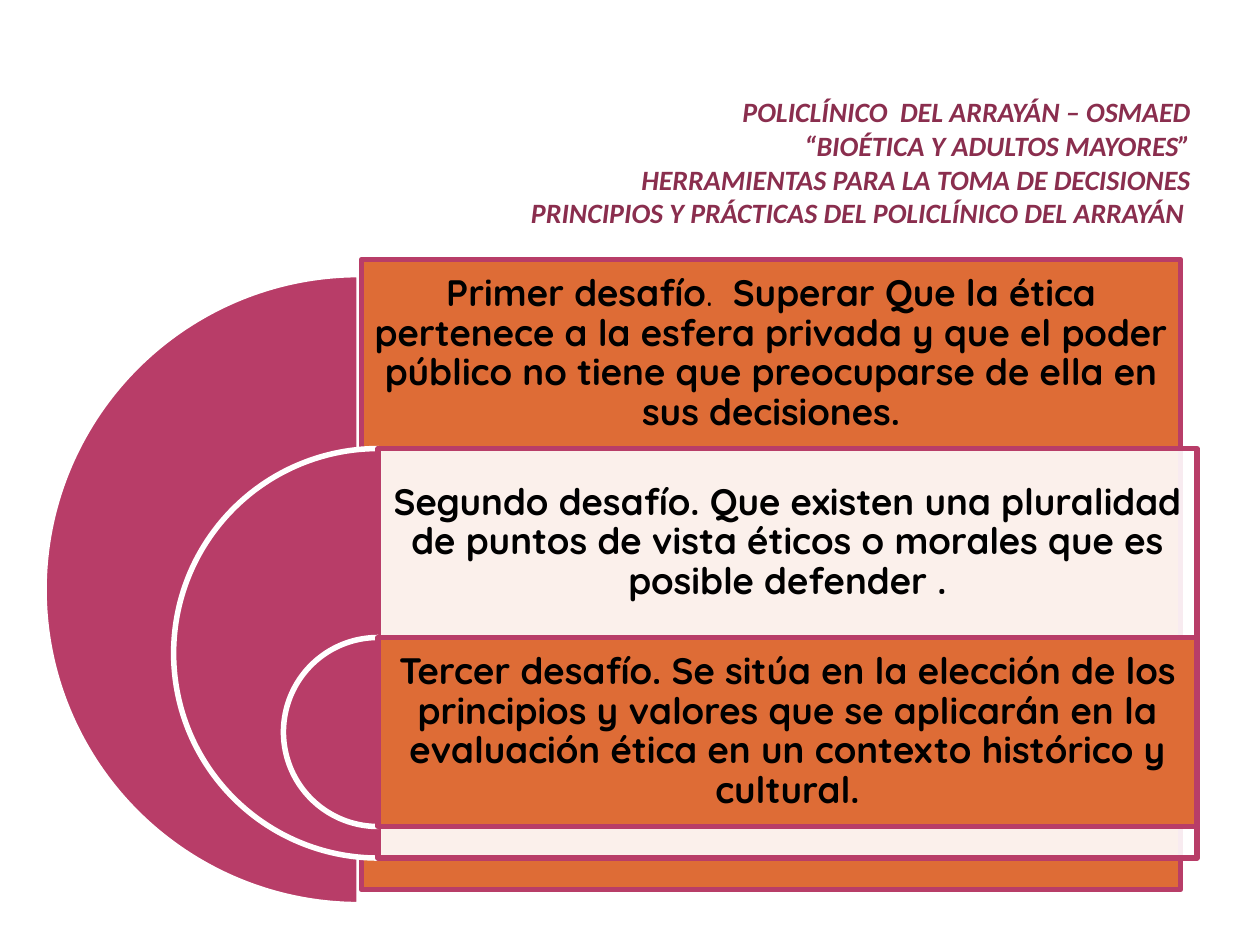
from pptx import Presentation
from pptx.dml.color import RGBColor
from pptx.enum.shapes import MSO_SHAPE
from pptx.enum.text import MSO_ANCHOR, PP_ALIGN
from pptx.oxml.ns import qn
from pptx.util import Pt
from lxml import etree

PIE, RECTANGLE = MSO_SHAPE.PIE, MSO_SHAPE.RECTANGLE
MIDDLE, BOTTOM = MSO_ANCHOR.MIDDLE, MSO_ANCHOR.BOTTOM
CENTER, RIGHT = PP_ALIGN.CENTER, PP_ALIGN.RIGHT

COLORS = {"white": "FFFFFF", "black": "000000", "wine": "8A2E4E",
          "raspberry": "B83D68", "orange": "DE6C36"}

HEADING = "\v".join([
    "POLICLÍNICO  DEL ARRAYÁN – OSMAED",
    "“BIOÉTICA Y ADULTOS MAYORES”",
    "HERRAMIENTAS PARA LA TOMA DE DECISIONES",
    "PRINCIPIOS Y PRÁCTICAS DEL POLICLÍNICO DEL ARRAYÁN ",
])

CHALLENGES = [
    (25.2, 156.96, 206.64, 148.32, 360, "orange", [
        ("Primer desafío", True), (".  ", False),
        ("Superar Que la ética pertenece a la esfera privada y que el poder "
         "público no tiene que preocuparse de ella en sus decisiones.", True)]),
    (99.2, 256.32, 216, 256.32, 234, "white", [
        ("Segundo desafío. Que existen una pluralidad de puntos de vista "
         "éticos o morales que es posible defender .", True)]),
    (162, 364.32, 216, 364.32, 108, "orange", [
        ("Tercer desafío. Se sitúa en la elección de los principios y valores "
         "que se aplicarán en la evaluación ética en un contexto histórico y "
         "cultural.", True)]),
]
PANEL_WIDTH, TEXT_HEIGHT = 468, 108


def add_block(preset, left, top, width, height, fill, line):
    block = slide.shapes.add_shape(preset, Pt(left), Pt(top), Pt(width), Pt(height))
    block.shadow.inherit = False
    block.fill.solid()
    block.fill.fore_color.rgb = RGBColor.from_string(COLORS[fill])
    block.line.color.rgb = RGBColor.from_string(COLORS[line])
    block.line.width = Pt(3.15)
    return block


def add_text(left, top, width, height, inset_x, inset_y, anchor, align, pieces,
             face, size, color, italic):
    frame = slide.shapes.add_textbox(Pt(left), Pt(top), Pt(width), Pt(height)).text_frame
    frame.word_wrap = True
    frame.vertical_anchor = anchor
    frame.margin_left = frame.margin_right = Pt(inset_x)
    frame.margin_top = frame.margin_bottom = Pt(inset_y)
    paragraph = frame.paragraphs[0]
    paragraph.alignment = align
    if len(pieces) == 1:
        paragraph.text = pieces[0][0]
    else:
        for wording, _ in pieces:
            paragraph.add_run().text = wording
    bolds = [bold for _, bold in pieces]
    for index, run in enumerate(paragraph.runs):
        run.font.name = face
        run.font.size = Pt(size)
        run.font.bold = bolds[min(index, len(bolds) - 1)]
        run.font.italic = italic
        run.font.color.rgb = RGBColor.from_string(COLORS[color])
    return paragraph


presentation = Presentation()
presentation.slide_width, presentation.slide_height = Pt(720), Pt(540)
slide = presentation.slides.add_slide(presentation.slide_layouts[6])

add_text(64.8, 0, 619.2, 131.04, 3.6, 0, BOTTOM, RIGHT, [(HEADING, True)],
         "Calibri", 16, "wine", True)

for arc_left, arc_top, left, top, size, fill, pieces in CHALLENGES:
    arc = add_block(PIE, arc_left, arc_top, size, size, "raspberry", "white")
    arc.adjustments[0], arc.adjustments[1] = 54, 162
    panel = add_block(RECTANGLE, left, top, PANEL_WIDTH, size, fill, "raspberry")
    if fill == "white":
        tint = panel.element.spPr.find(qn("a:solidFill"))[0]
        etree.SubElement(tint, qn("a:alpha"), val="90000")
    challenge = add_text(left, top, PANEL_WIDTH, TEXT_HEIGHT, 6.48, 6.48, MIDDLE,
                         CENTER, pieces, "Quicksand", 21, "black", False)
    challenge.line_spacing = 0.9

presentation.save("out.pptx")
